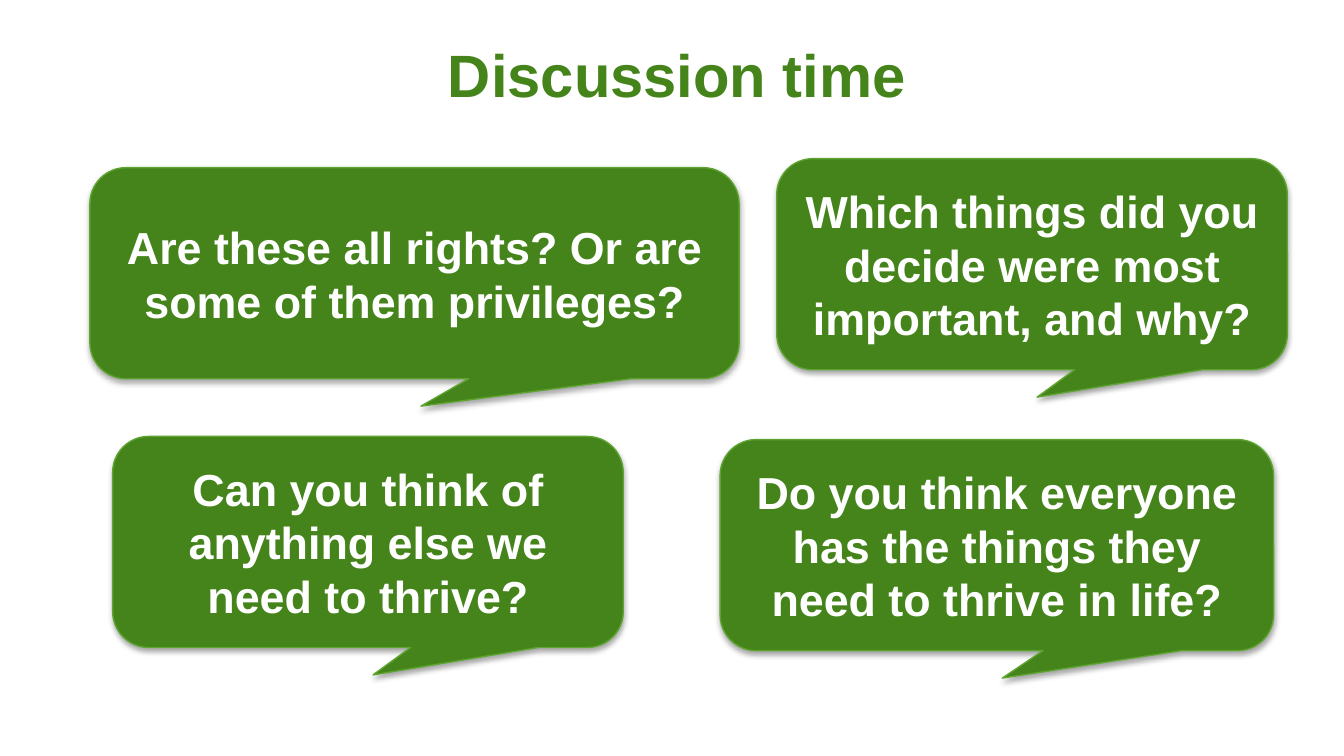
from dataclasses import dataclass

from lxml import etree
from pptx import Presentation
from pptx import util as u
from pptx.dml.color import RGBColor
from pptx.enum import shapes, text
from pptx.oxml.ns import qn
from pptx.slide import Slide

COLOURS = {
    "green": "44841A",
    "outline": "5EA430",
    "white": "FFFFFF",
    "shadow": "000000",
}
BUBBLE_HEIGHT = 3.99

# Left, top and width in centimetres, then the question.
QUESTIONS = [
    (14.68, 3.0, 9.65, "Which things did you decide were most important, and why?"),
    (1.7, 3.17, 12.27, "Are these all rights? Or are some of them privileges?"),
    (2.13, 8.25, 9.65, "Can you think of anything else we need to thrive?"),
    (13.61, 8.31, 10.46,
     "Do you think everyone has the things they need to thrive in life?"),
]


def colour(name):
    return RGBColor.from_string(COLOURS[name])


@dataclass
class DiscussionSlide:
    slide: Slide
    font: str = "Arial"
    title_size: int = 32
    question_size: int = 24

    def add_words(self, shape, words, size, colour_name):
        frame = shape.text_frame
        frame.word_wrap = True
        frame.vertical_anchor = text.MSO_ANCHOR.MIDDLE
        paragraph = frame.paragraphs[0]
        paragraph.alignment = text.PP_ALIGN.CENTER
        run = paragraph.add_run()
        run.text = words
        run.font.name = self.font
        run.font.size = u.Pt(size)
        run.font.bold = True
        run.font.color.rgb = colour(colour_name)

    def title(self, words, left, top, width, height):
        shape = self.slide.shapes.title
        shape.left, shape.top = u.Cm(left), u.Cm(top)
        shape.width, shape.height = u.Cm(width), u.Cm(height)
        self.add_words(shape, words, self.title_size, "green")

    def bubble(self, left, top, width, words):
        shape = self.slide.shapes.add_shape(
            shapes.MSO_SHAPE.ROUNDED_RECTANGULAR_CALLOUT,
            u.Cm(left), u.Cm(top), u.Cm(width), u.Cm(BUBBLE_HEIGHT))
        for index, value in enumerate((0.01, 0.63, 0.17)):
            shape.adjustments[index] = value
        shape.fill.solid()
        shape.fill.fore_color.rgb = colour("green")
        shape.line.color.rgb = colour("outline")
        shape.line.width = u.Pt(0.75)
        self.drop_shadow(shape)
        self.add_words(shape, words, self.question_size, "white")

    def drop_shadow(self, shape):
        """Cast a soft shadow straight down."""
        shape.shadow.inherit = False
        effects = shape.element.spPr.find(qn("a:effectLst"))
        shadow = etree.SubElement(
            effects, qn("a:outerShdw"), blurRad=str(u.Pt(3.1)),
            dist=str(u.Pt(1.8)), dir=str(90 * 60000), rotWithShape="0")
        tint = etree.SubElement(shadow, qn("a:srgbClr"), val=COLOURS["shadow"])
        etree.SubElement(tint, qn("a:alpha"), val="35000")


def main():
    presentation = Presentation()
    presentation.slide_width = u.Cm(25.4)
    presentation.slide_height = u.Cm(14.29)
    title_only = presentation.slide_layouts[5]
    discussion = DiscussionSlide(presentation.slides.add_slide(title_only))
    discussion.title("Discussion time", 1.7, 0.41, 22.2, 1.96)
    for question in QUESTIONS:
        discussion.bubble(*question)
    presentation.save("out.pptx")


if __name__ == "__main__":
    main()
